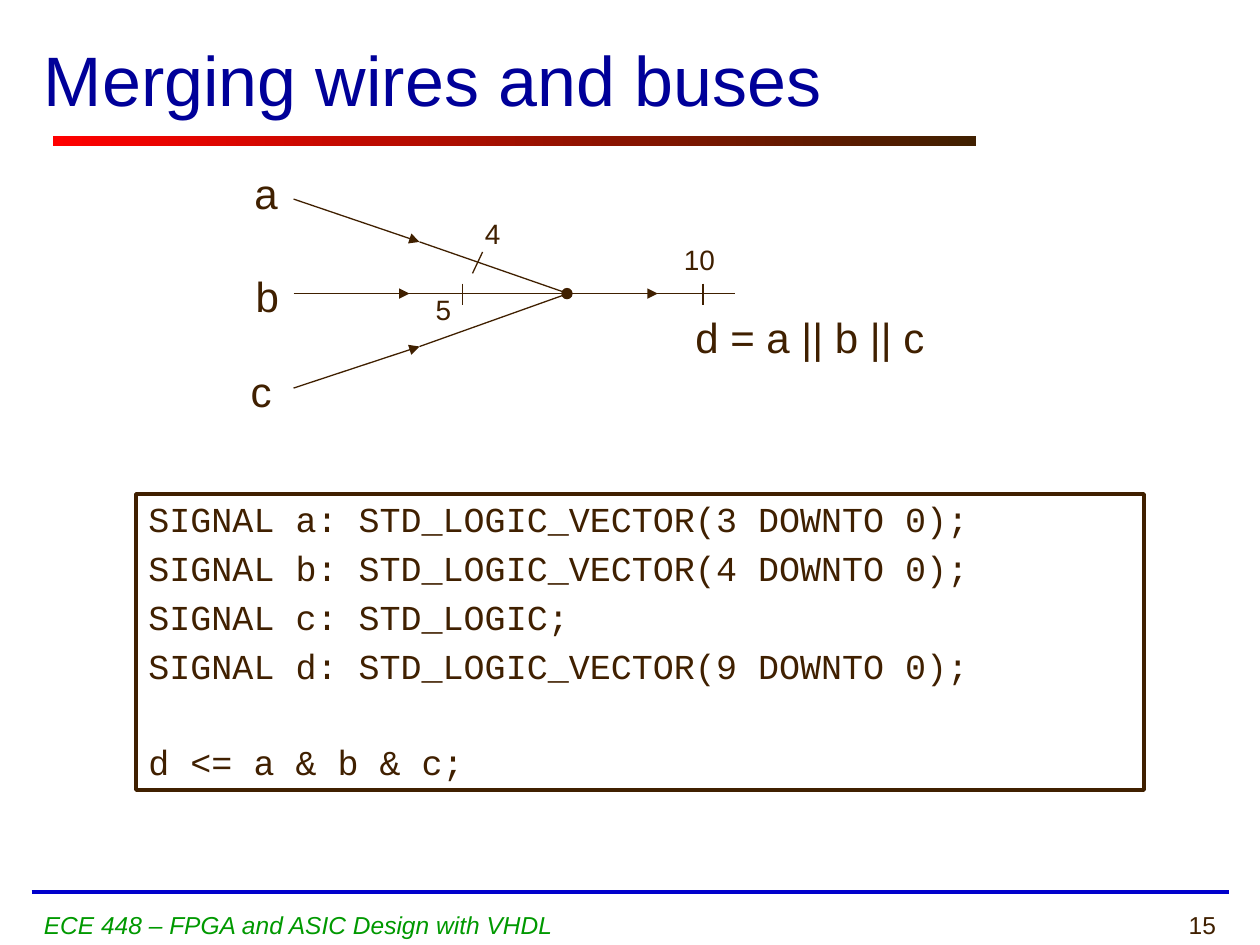
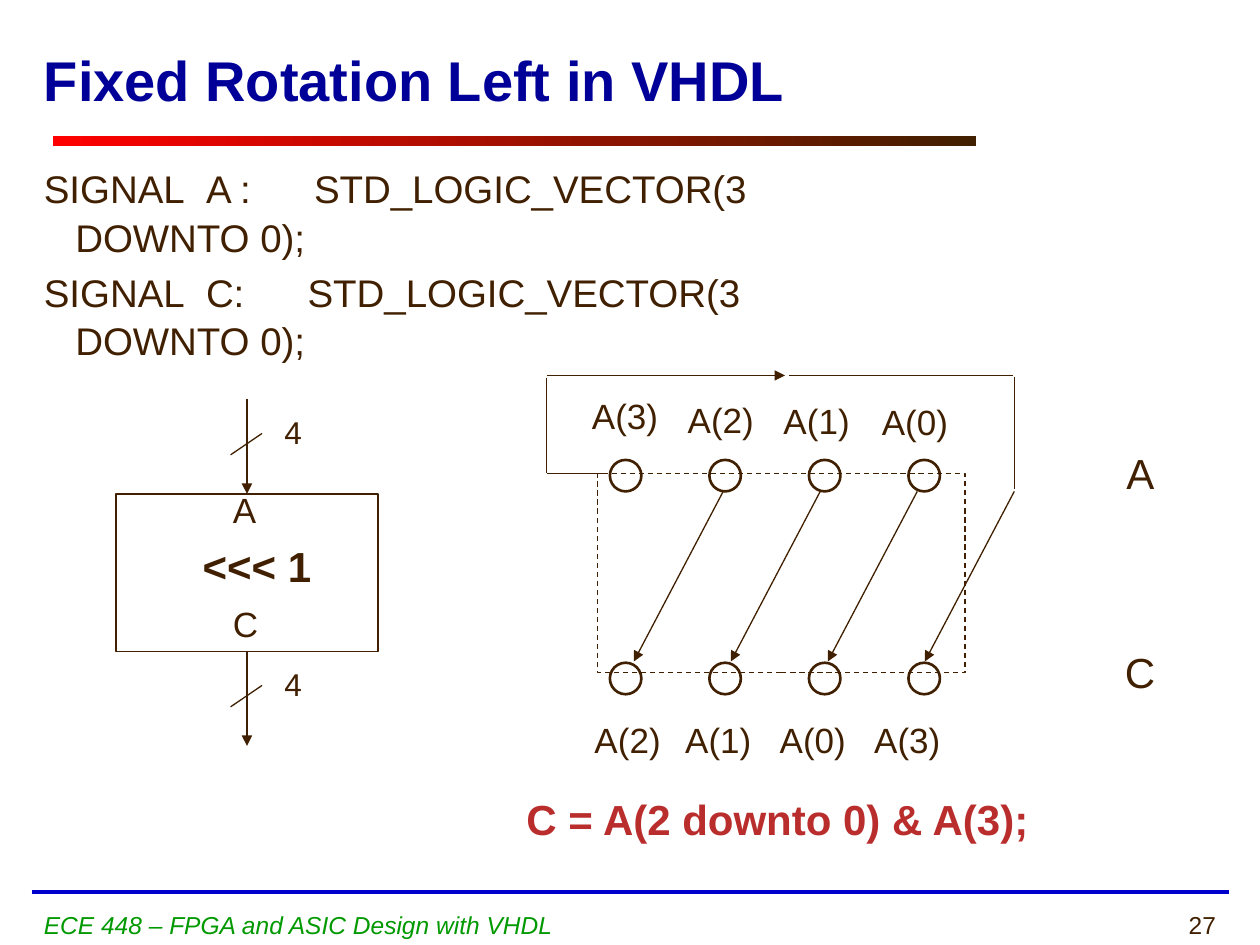
"""Build two VHDL lecture slides: merging buses and fixed rotation."""
from dataclasses import dataclass

from lxml import etree
from pptx import Presentation
from pptx.dml.color import RGBColor
from pptx.enum.dml import MSO_LINE
from pptx.enum.shapes import MSO_CONNECTOR, MSO_SHAPE
from pptx.enum.text import MSO_ANCHOR, PP_ALIGN
from pptx.oxml.ns import qn
from pptx.util import Inches, Pt

STRAIGHT = MSO_CONNECTOR.STRAIGHT
RECT, OVAL = MSO_SHAPE.RECTANGLE, MSO_SHAPE.OVAL
DASH = MSO_LINE.DASH
TOP, MIDDLE = MSO_ANCHOR.TOP, MSO_ANCHOR.MIDDLE
LEFT, RIGHT = PP_ALIGN.LEFT, PP_ALIGN.RIGHT
BOX_TOP, BOX_BOTTOM = 0, 2

COLORS = {
    "ink": "402000", "title": "000099", "footer": "009900",
    "rule": "0000CC", "band": "FF0000", "result": "BA2D2D",
}
COURSE = "ECE 448 – FPGA and ASIC Design with VHDL"
CODE = [
    "SIGNAL a: STD_LOGIC_VECTOR(3 DOWNTO 0);",
    "SIGNAL b: STD_LOGIC_VECTOR(4 DOWNTO 0);",
    "SIGNAL c: STD_LOGIC;",
    "SIGNAL d: STD_LOGIC_VECTOR(9 DOWNTO 0);",
    "d <= a & b & c;",
]


@dataclass
class Label:
    """A single-line text box."""
    text: str
    x: float
    y: float
    w: float
    h: float
    size: float
    color: str = "ink"
    bold: bool = False
    italic: bool = False
    align: PP_ALIGN = LEFT
    anchor: MSO_ANCHOR = TOP
    before: float = 0


@dataclass
class Wire:
    """A straight line, with an optional arrowhead at its end."""
    x1: float
    y1: float
    x2: float
    y2: float
    arrow: bool = False
    color: str = "ink"
    width: float = 0.75


@dataclass
class Node:
    """An outlined preset shape."""
    kind: MSO_SHAPE
    x: float
    y: float
    w: float
    h: float
    width: float = 0.75
    fill: str = ""
    dash: bool = False


def rgb(name: str) -> RGBColor:
    """Return the named colour."""
    return RGBColor.from_string(COLORS[name])


def apply(obj, values: dict) -> None:
    """Set each attribute given in values."""
    for name, value in values.items():
        setattr(obj, name, value)


def add_run(p, text: str, size: float, color: str = "ink", **fmt):
    """Append a formatted run to a paragraph."""
    r = p.add_run()
    r.text = text
    apply(r.font, {"name": "Arial", "size": Pt(size), **fmt})
    r.font.color.rgb = rgb(color)
    return r


def add_label(slide, label: Label) -> None:
    """Draw a label."""
    sp = slide.shapes.add_textbox(*map(Inches, (label.x, label.y, label.w, label.h)))
    tf = sp.text_frame
    apply(tf, {"word_wrap": False, "vertical_anchor": label.anchor})
    p = tf.paragraphs[0]
    apply(p, {"alignment": label.align, "space_before": Pt(label.before)})
    add_run(p, label.text, label.size, label.color, bold=label.bold, italic=label.italic)


def add_wire(slide, wire: Wire):
    """Draw a wire and return its connector."""
    c = slide.shapes.add_connector(
        STRAIGHT, *map(Inches, (wire.x1, wire.y1, wire.x2, wire.y2)))
    c.line.color.rgb = rgb(wire.color)
    c.line.width = Pt(wire.width)
    sp_pr = c._element.spPr
    if wire.arrow:
        etree.SubElement(sp_pr.find(qn("a:ln")), qn("a:tailEnd"), type="triangle")
    etree.SubElement(sp_pr, qn("a:effectLst"))
    return c


def add_node(slide, node: Node):
    """Draw a node and return its shape."""
    sp = slide.shapes.add_shape(node.kind, *map(Inches, (node.x, node.y, node.w, node.h)))
    sp.shadow.inherit = False
    if node.fill:
        sp.fill.solid()
        sp.fill.fore_color.rgb = rgb(node.fill)
    else:
        sp.fill.background()
    sp.line.color.rgb = rgb("ink")
    sp.line.width = Pt(node.width)
    if node.dash:
        sp.line.dash_style = DASH
    return sp


def add_base(prs, title: str, number: int, size: float, bold: bool):
    """Add a slide with title, gradient band, rule and footer."""
    slide = prs.slides.add_slide(prs.slide_layouts[6])
    add_wire(slide, Wire(0.25, 7.08, 9.75, 7.08, color="rule", width=2.25))
    band = slide.shapes.add_shape(RECT, *map(Inches, (0.42, 1.08, 7.33, 0.08)))
    band.shadow.inherit = False
    band.line.fill.background()
    band.fill.gradient()
    band.fill.gradient_angle = 0
    for stop, color, position in zip(band.fill.gradient_stops, ("band", "ink"), (0, 1)):
        stop.color.rgb = rgb(color)
        stop.position = position
    add_label(slide, Label(str(number), 7.58, 7.17, 2.17, 0.33, 14, align=RIGHT))
    add_label(slide, Label(COURSE, 0.25, 7.17, 7.33, 0.33, 14, "footer", italic=True))
    add_label(slide, Label(title, 0.25, 0, 9.17, 1.25, size, "title", bold, anchor=MIDDLE))
    return slide


def add_code(slide) -> None:
    """Draw the framed VHDL listing."""
    tf = add_node(slide, Node(RECT, 1.08, 3.92, 8, 2.35, 2)).text_frame
    apply(tf, {"word_wrap": True, "vertical_anchor": TOP})
    gaps = [4, 5.3, 5.3, 5.3, 32.2]
    for i, (text, gap) in enumerate(zip(CODE, gaps)):
        p = tf.add_paragraph() if i else tf.paragraphs[0]
        apply(p, {"alignment": LEFT, "line_spacing": 0.95, "space_before": Pt(gap)})
        add_run(p, text, 20, name="Courier New")


def add_signals(slide) -> None:
    """Draw the two signal declarations with hanging indents."""
    tf = slide.shapes.add_textbox(*map(Inches, (0.25, 1.25, 6.76, 1.7))).text_frame
    tf.word_wrap = True
    for i, (name, gap) in enumerate((("A :", 2), ("C:", 4.5))):
        p = tf.add_paragraph() if i else tf.paragraphs[0]
        apply(p, {"line_spacing": 1.04, "space_before": Pt(gap)})
        p_pr = p._p.get_or_add_pPr()
        p_pr.set("marL", str(Inches(0.25)))
        p_pr.set("indent", str(Inches(-0.25)))
        pieces = (("SIGNAL", 0), (" ", 6), (name, 0), (" ", 30),
                  ("STD_LOGIC_VECTOR(3 DOWNTO 0);", 0))
        for text, spacing in pieces:
            r = add_run(p, text, 22)
            if spacing:
                r._r.get_or_add_rPr().set("spc", str(spacing * 100))


def build_merging(prs) -> None:
    """Build the slide on merging wires and buses."""
    slide = add_base(prs, "Merging wires and buses", 15, 40, False)
    add_code(slide)
    add_node(slide, Node(OVAL, 4.46, 2.29, 0.08, 0.08, fill="ink"))
    wires = [
        Wire(2.33, 1.58, 3.33, 1.92, True), Wire(3.33, 1.92, 4.48, 2.32),
        Wire(2.33, 2.33, 3.25, 2.33, True), Wire(3.23, 2.33, 5.22, 2.33, True),
        Wire(2.33, 3.08, 3.33, 2.75, True), Wire(3.33, 2.75, 4.48, 2.34),
        Wire(5.2, 2.33, 5.83, 2.33), Wire(3.83, 2, 3.75, 2.17),
    ]
    wires += [Wire(x, 2.25, x, 2.42) for x in (3.67, 5.58)]
    for wire in wires:
        add_wire(slide, wire)
    for text, x, y, w in (("4", 3.75, 1.67, 0.32), ("5", 3.36, 2.27, 0.32),
                          ("10", 5.33, 1.88, 0.45)):
        add_label(slide, Label(text, x, y, w, 0.37, 16, before=1.6))
    for text, x, y, w in (("a", 1.92, 1.28, 0.39), ("b", 1.93, 2.1, 0.39),
                          ("c", 1.89, 2.85, 0.37), ("d = a || b || c", 5.42, 2.42, 2.08)):
        add_label(slide, Label(text, x, y, w, 0.5, 24, before=2.4))


def build_rotation(prs) -> None:
    """Build the slide on fixed rotation."""
    slide = add_base(prs, "Fixed Rotation Left in VHDL", 27, 32, True)
    add_signals(slide)

    add_node(slide, Node(RECT, 4.74, 3.76, 2.92, 1.58, dash=True))
    for y in (3.65, 5.26):
        for i in range(4):
            add_node(slide, Node(OVAL, 4.84 + 0.79 * i, y, 0.25, 0.25, 1.5))
    for i in range(4):
        shift = 0.77 * i
        add_wire(slide, Wire(5.74 + shift, 3.9, 5.03 + shift, 5.25, True))
    for wire in (Wire(4.79, 3.76, 4.34, 3.76), Wire(4.34, 3.75, 4.34, 3),
                 Wire(4.34, 2.98, 6.23, 2.98, True), Wire(6.26, 2.98, 8.04, 2.98),
                 Wire(8.05, 3.88, 8.05, 2.99)):
        add_wire(slide, wire)
    bits = [
        ("A(3)", 4.6, 3.08), ("A(2)", 5.36, 3.11), ("A(1)", 6.12, 3.12), ("A(0)", 6.9, 3.13),
        ("A(2)", 4.62, 5.65), ("A(1)", 5.34, 5.65), ("A(0)", 6.09, 5.65), ("A(3)", 6.84, 5.65),
    ]
    for text, x, y in bits:
        add_label(slide, Label(text, x, y, 0.73, 0.43, 20, before=2))

    rotator = add_node(slide, Node(RECT, 0.92, 3.92, 2.08, 1.25))
    add_wire(slide, Wire(1.96, 3.17, 1.96, 3.92, True)).end_connect(rotator, BOX_TOP)
    add_wire(slide, Wire(1.96, 5.17, 1.96, 5.92, True)).begin_connect(rotator, BOX_BOTTOM)
    for y in (3.23, 5.23):
        add_wire(slide, Wire(1.83, y + 0.38, 2.08, y + 0.21))
        add_label(slide, Label("4", 2.16, y, 0.34, 0.4, 18))
    for label in (
        Label("A", 1.75, 3.83, 0.41, 0.44, 20),
        Label("C", 1.75, 4.73, 0.4, 0.44, 20),
        Label("<<< 1", 1.51, 4.24, 1.07, 0.51, 24, bold=True, before=2.4),
        Label("A", 8.84, 3.5, 0.42, 0.5, 24, before=2.4),
        Label("C", 8.83, 5.08, 0.44, 0.51, 24, before=2.4),
        Label("C = A(2 downto 0) & A(3);", 4.08, 6.25, 4.23, 0.51, 24, "result", True,
              before=2.4),
    ):
        add_label(slide, label)


def main() -> None:
    """Create and save the presentation."""
    prs = Presentation()
    apply(prs, {"slide_width": Inches(10), "slide_height": Inches(7.5)})
    build_merging(prs)
    build_rotation(prs)
    prs.save("out.pptx")


if __name__ == "__main__":
    main()
